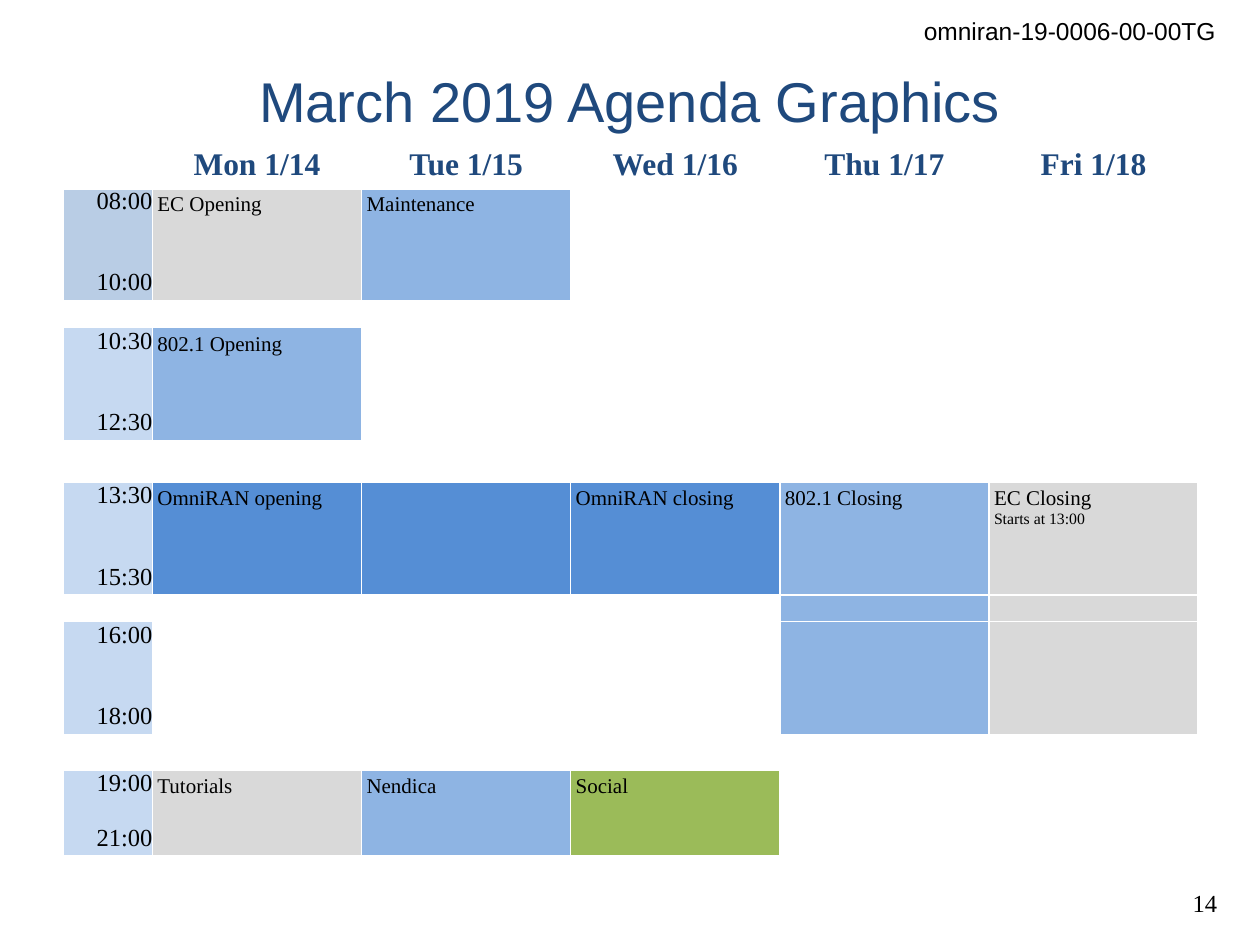
"""Build the weekly agenda slide with its session timetable."""
from dataclasses import dataclass

from lxml import etree
from pptx import Presentation
from pptx import util as u
from pptx.dml.color import RGBColor
from pptx.enum import text
from pptx.oxml import ns

BLACK = RGBColor(0x00, 0x00, 0x00)
WHITE = RGBColor(0xFF, 0xFF, 0xFF)
NAVY = RGBColor(0x1F, 0x49, 0x7D)
GRAY = RGBColor(0xD9, 0xD9, 0xD9)
LIGHT_BLUE = RGBColor(0x8E, 0xB4, 0xE3)
BLUE = RGBColor(0x55, 0x8E, 0xD5)
GREEN = RGBColor(0x9B, 0xBB, 0x59)
FIRST_TIME = RGBColor(0xB9, 0xCD, 0xE5)
TIME = RGBColor(0xC6, 0xD9, 0xF1)

ALIGN = text.PP_ALIGN
SANS, SERIF = "Arial", "Times New Roman"
LINE = 15.5

DAYS = ["Mon 1/14", "Tue 1/15", "Wed 1/16", "Thu 1/17", "Fri 1/18"]
COLUMN_WIDTHS = [0.71] + [1.66] * len(DAYS)
ROW_HEIGHTS = [0.32, 0.86, 0.21, 0.86, 0.33, 0.86, 0.21, 0.86, 0.28, 0.64]
TIMES = {
    1: ("08:00", "10:00", 2, FIRST_TIME),
    3: ("10:30", "12:30", 2, TIME),
    5: ("13:30", "15:30", 2, TIME),
    7: ("16:00", "18:00", 2, TIME),
    9: ("19:00", "21:00", 1, TIME),
}
SESSIONS = {
    (1, 1): ("EC Opening", GRAY),
    (1, 2): ("Maintenance", LIGHT_BLUE),
    (3, 1): ("802.1 Opening", LIGHT_BLUE),
    (5, 1): ("OmniRAN opening", BLUE),
    (5, 2): ("", BLUE),
    (5, 3): ("OmniRAN closing", BLUE),
    (5, 4): ("802.1 Closing", LIGHT_BLUE),
    (5, 5): ("EC Closing", GRAY),
    (6, 4): ("", LIGHT_BLUE),
    (6, 5): ("", GRAY),
    (7, 4): ("", LIGHT_BLUE),
    (7, 5): ("", GRAY),
    (9, 1): ("Tutorials", GRAY),
    (9, 2): ("Nendica", LIGHT_BLUE),
    (9, 3): ("Social", GREEN),
}


@dataclass
class AgendaSlide:
    """Hold the current slide and the timetable style."""
    slide: object
    border: RGBColor = WHITE
    session_margin: float = 0.04

    def add_text(self, frame, content, align=ALIGN.LEFT, space=0, **formats):
        """Add one paragraph, using the first one while it is empty."""
        paragraph = frame.paragraphs[0]
        if paragraph.runs:
            paragraph = frame.add_paragraph()
            paragraph.space_before = u.Pt(space)
        paragraph.alignment = align
        run = paragraph.add_run()
        run.text = content
        values = {"name": SERIF, "size": u.Pt(14), "bold": False, **formats}
        run.font.color.rgb = values.pop("color", BLACK)
        for name, value in values.items():
            setattr(run.font, name, value)

    def title(self, content, left, top, width, height):
        """Place and format the title."""
        title = self.slide.shapes.title
        box = {"left": left, "top": top, "width": width, "height": height}
        for name, value in box.items():
            setattr(title, name, u.Inches(value))
        title.text_frame.vertical_anchor = text.MSO_ANCHOR.MIDDLE
        self.add_text(title.text_frame, content, ALIGN.CENTER,
                      name=SANS, size=u.Pt(32), color=NAVY)

    def label(self, content, left, top, width, height, font):
        """Add a right-aligned label."""
        box = self.slide.shapes.add_textbox(*map(u.Inches, (left, top, width, height)))
        box.text_frame.word_wrap = False
        self.add_text(box.text_frame, content, ALIGN.RIGHT, name=font)

    def table(self, left, top):
        """Add the empty bordered grid."""
        size = sum(COLUMN_WIDTHS), sum(ROW_HEIGHTS)
        frame = self.slide.shapes.add_table(
            len(ROW_HEIGHTS), len(COLUMN_WIDTHS),
            *map(u.Inches, (left, top, *size)))
        table = frame.table
        table.first_row = table.horz_banding = False
        for column, width in zip(table.columns, COLUMN_WIDTHS):
            column.width = u.Inches(width)
        for row, height in zip(table.rows, ROW_HEIGHTS):
            row.height = u.Inches(height)
        return table

    def cell(self, cell, fill=WHITE, margin=0, bottom=1):
        """Style one cell and return its text frame."""
        properties = cell._tc.get_or_add_tcPr()
        for side, width in {"L": 1, "R": 1, "T": 1, "B": bottom}.items():
            line = etree.SubElement(properties, ns.qn(f"a:ln{side}"), w=str(u.Pt(width)))
            solid = etree.SubElement(line, ns.qn("a:solidFill"))
            etree.SubElement(solid, ns.qn("a:srgbClr"), val=str(self.border))
        cell.fill.solid()
        cell.fill.fore_color.rgb = fill
        for side in ("left", "right", "top", "bottom"):
            setattr(cell, f"margin_{side}", u.Inches(margin))
        etree.SubElement(cell.text_frame.paragraphs[0]._p,
                         ns.qn("a:endParaRPr"), sz="800")
        return cell.text_frame

    def timetable(self, left, top):
        """Fill the grid with days, times and sessions."""
        table = self.table(left, top)
        for column, day in enumerate([""] + DAYS):
            frame = self.cell(table.cell(0, column), bottom=3)
            if day:
                self.add_text(frame, day, ALIGN.CENTER,
                              size=u.Pt(18), bold=True, color=NAVY)
        for row in range(1, len(ROW_HEIGHTS)):
            start, end, gap, fill = TIMES.get(row, ("", "", 0, WHITE))
            frame = self.cell(table.cell(row, 0), fill)
            if start:
                self.add_text(frame, start, ALIGN.RIGHT)
                self.add_text(frame, end, ALIGN.RIGHT, gap * LINE)
            for column in range(1, len(COLUMN_WIDTHS)):
                name, fill = SESSIONS.get((row, column), ("", WHITE))
                margin = self.session_margin if name else 0
                frame = self.cell(table.cell(row, column), fill, margin)
                if name:
                    self.add_text(frame, name, size=u.Pt(12))
                if name == "EC Closing":
                    self.add_text(frame, "Starts at 13:00", size=u.Pt(9))


def main():
    """Create and save the presentation."""
    presentation = Presentation()
    presentation.slide_width = u.Inches(10)
    presentation.slide_height = u.Inches(7.5)
    agenda = AgendaSlide(presentation.slides.add_slide(presentation.slide_layouts[5]))
    agenda.label("omniran-19-0006-00-00TG", 7.22, 0.08, 2.53, 0.34, SANS)
    agenda.label("14", 9.33, 7, 0.43, 0.34, SERIF)
    agenda.title("March 2019 Agenda Graphics", 0.5, 0.42, 9, 0.75)
    agenda.timetable(0.5, 1.17)
    presentation.save("out.pptx")


if __name__ == "__main__":
    main()
